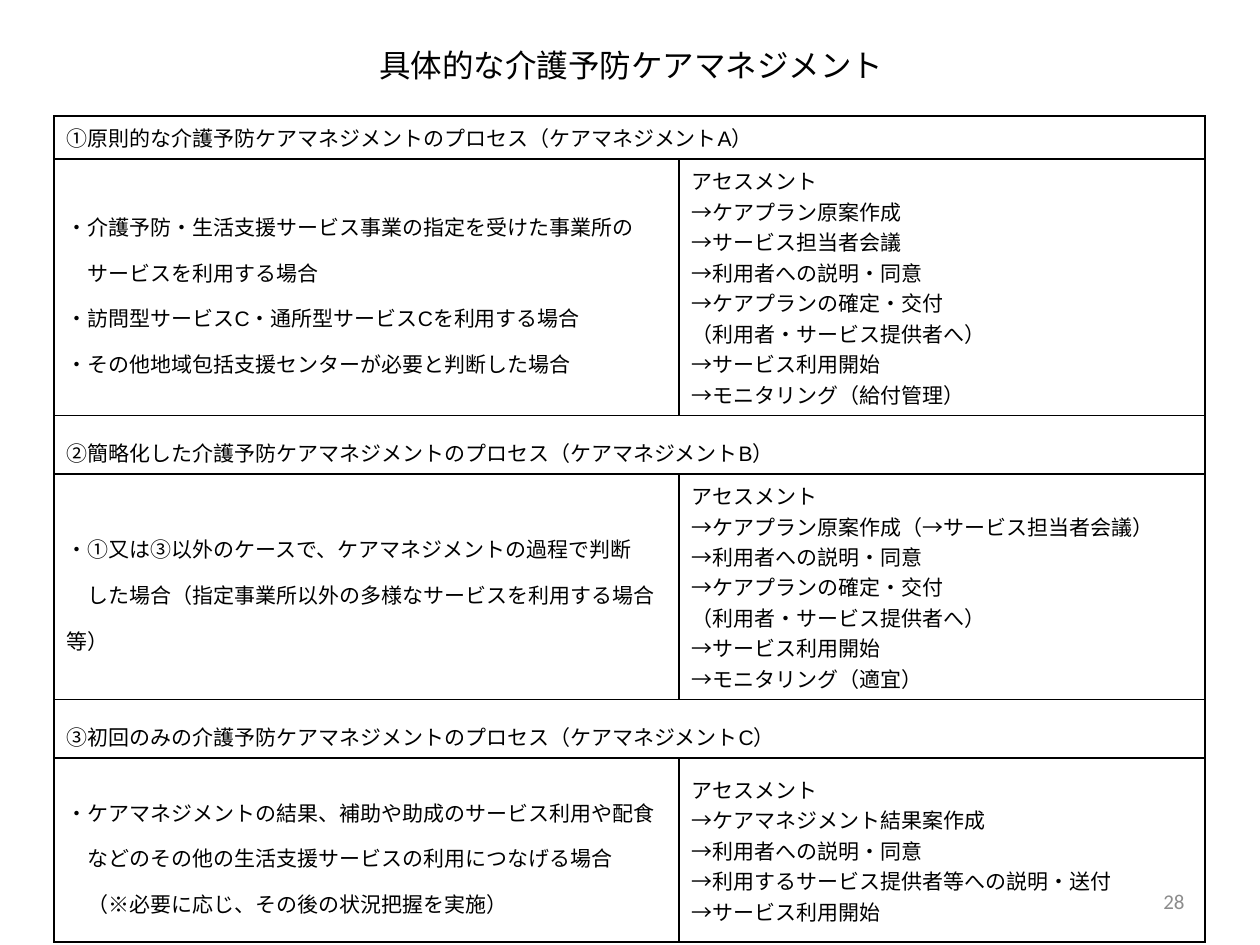
from lxml import etree
from pptx import Presentation
from pptx.dml.color import RGBColor
from pptx.enum.text import MSO_ANCHOR, PP_ALIGN
from pptx.oxml.ns import qn
from pptx.util import Cm, Pt

MIDDLE = MSO_ANCHOR.MIDDLE
CENTER, LEFT, RIGHT = PP_ALIGN.CENTER, PP_ALIGN.LEFT, PP_ALIGN.RIGHT

TITLE = "具体的な介護予防ケアマネジメント"
PAGE = "28"
SECTIONS = [
    {
        "heading": "①原則的な介護予防ケアマネジメントのプロセス（ケアマネジメントA）",
        "spacing": 1.0,
        "heights": (0.74, 4.9),
        "cases": [
            "・介護予防・生活支援サービス事業の指定を受けた事業所の",
            "　サービスを利用する場合",
            "・訪問型サービスC・通所型サービスCを利用する場合",
            "・その他地域包括支援センターが必要と判断した場合",
        ],
        "steps": [
            "アセスメント",
            "→ケアプラン原案作成",
            "→サービス担当者会議",
            "→利用者への説明・同意",
            "→ケアプランの確定・交付",
            "（利用者・サービス提供者へ）",
            "→サービス利用開始",
            "→モニタリング（給付管理）",
        ],
    },
    {
        "heading": "②簡略化した介護予防ケアマネジメントのプロセス（ケアマネジメントB）",
        "spacing": 1.5,
        "heights": (0.86, 4.29),
        "cases": [
            "・①又は③以外のケースで、ケアマネジメントの過程で判断",
            "　した場合（指定事業所以外の多様なサービスを利用する場合等）",
        ],
        "steps": [
            "アセスメント",
            "→ケアプラン原案作成（→サービス担当者会議）",
            "→利用者への説明・同意",
            "→ケアプランの確定・交付",
            "（利用者・サービス提供者へ）",
            "→サービス利用開始",
            "→モニタリング（適宜）",
        ],
    },
    {
        "heading": "③初回のみの介護予防ケアマネジメントのプロセス（ケアマネジメントC）",
        "spacing": 1.5,
        "heights": (0.86, 3.71),
        "cases": [
            "・ケアマネジメントの結果、補助や助成のサービス利用や配食",
            "　などのその他の生活支援サービスの利用につなげる場合",
            "　（※必要に応じ、その後の状況把握を実施）",
        ],
        "steps": [
            "アセスメント",
            "→ケアマネジメント結果案作成",
            "→利用者への説明・同意",
            "→利用するサービス提供者等への説明・送付",
            "→サービス利用開始",
        ],
    },
]
COL_WIDTHS = (12.6, 10.6)


def rgb(color):
    return RGBColor.from_string(color)


def write(tf, lines, size, font, color="000000", align=LEFT, spacing=1.0):
    tf.word_wrap = True
    for i, line in enumerate(lines):
        p = tf.paragraphs[0] if i == 0 else tf.add_paragraph()
        p.add_run().text = line
        p.alignment = align
        p.line_spacing = spacing
        p.font.size = Pt(size)
        p.font.name = font
        p.font.color.rgb = rgb(color)


def add_borders(cell):
    tc_pr = cell._tc.get_or_add_tcPr()
    for i, side in enumerate(("a:lnL", "a:lnR", "a:lnT", "a:lnB")):
        ln = etree.Element(qn(side), w=str(Pt(1)))
        fill = etree.SubElement(ln, qn("a:solidFill"))
        etree.SubElement(fill, qn("a:srgbClr"), val="000000")
        tc_pr.insert(i, ln)


def add_process_table(s):
    heights = [h for section in SECTIONS for h in section["heights"]]
    table = s.shapes.add_table(
        len(heights), len(COL_WIDTHS), Cm(1.09), Cm(2.34),
        Cm(sum(COL_WIDTHS)), Cm(sum(heights))).table
    table.first_row = table.horz_banding = False
    for col, width in zip(table.columns, COL_WIDTHS):
        col.width = Cm(width)
    for row, height in zip(table.rows, heights):
        row.height = Cm(height)
    for cell in table.iter_cells():
        cell.fill.background()
        cell.vertical_anchor = MIDDLE
        add_borders(cell)
    for i, section in enumerate(SECTIONS):
        top, body = 2 * i, 2 * i + 1
        table.cell(top, 0).merge(table.cell(top, 1))
        for cell, lines, spacing in (
            (table.cell(top, 0), [section["heading"]], section["spacing"]),
            (table.cell(body, 0), section["cases"], 1.5),
            (table.cell(body, 1), section["steps"], 1.0),
        ):
            write(cell.text_frame, lines, 12, "Arial", spacing=spacing)


def main():
    """Build the care management process slide."""
    prs = Presentation()
    prs.slide_width, prs.slide_height = Cm(25.4), Cm(19.05)
    s = prs.slides.add_slide(prs.slide_layouts[5])

    title = s.shapes.title
    title.left, title.top, title.width, title.height = (
        Cm(1.3), Cm(0.53), Cm(22.86), Cm(1.55))
    title.text_frame.vertical_anchor = MIDDLE
    write(title.text_frame, [TITLE], 18, "Calibri", align=CENTER)

    add_process_table(s)

    page = s.shapes.add_textbox(Cm(18.21), Cm(17.65), Cm(5.92), Cm(1.02))
    page.text_frame.vertical_anchor = MIDDLE
    write(page.text_frame, [PAGE], 12, "Calibri", "8C8C8C", RIGHT)

    prs.save("out.pptx")


if __name__ == "__main__":
    main()
